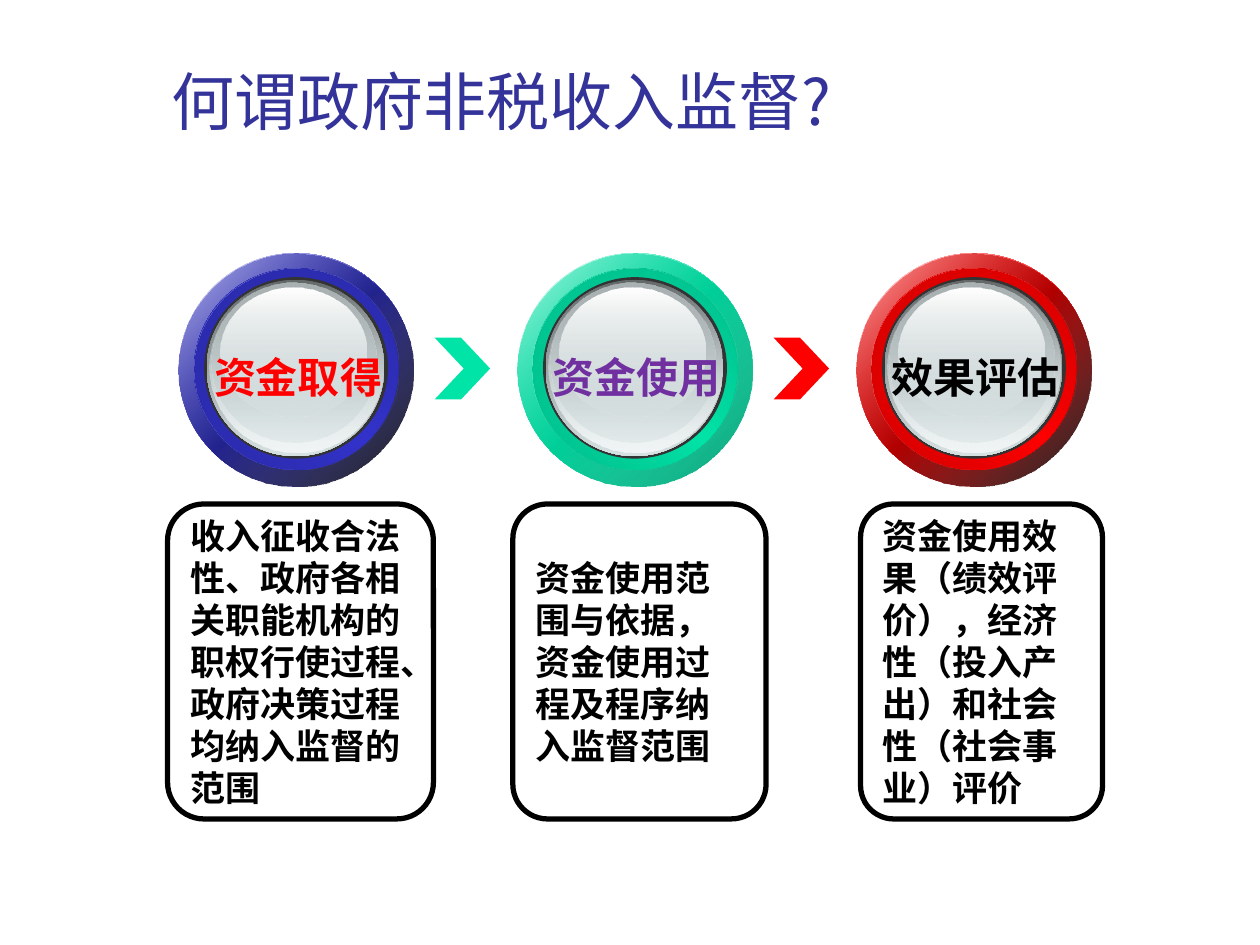
from pptx import Presentation
from pptx.dml.color import RGBColor
from pptx.enum.shapes import MSO_SHAPE
from pptx.enum.text import MSO_ANCHOR, MSO_AUTO_SIZE, PP_ALIGN
from pptx.oxml import parse_xml
from pptx.oxml.ns import nsdecls, qn
from pptx.util import Inches, Pt

OVAL, CHEVRON, ROUNDED = MSO_SHAPE.OVAL, MSO_SHAPE.CHEVRON, MSO_SHAPE.ROUNDED_RECTANGLE
LEFT, CENTER = PP_ALIGN.LEFT, PP_ALIGN.CENTER
CJK = "Noto Sans CJK SC"

# Content
TITLE = "何谓政府非税收入监督?"
# label, label colour, ring colour, ring edge, ring inner edge, shade (colour, opacity),
# box left and width, box text
STAGES = [
    ("资金取得", "FF0000", "3333CC", "27279C", "2A2AA7", ("000000", 90), (1.33, 2.11),
     "收入征收合法性、政府各相关职能机构的职权行使过程、政府决策过程均纳入监督的范围"),
    ("资金使用", "7030A0", "00E4A8", "00AF81", "00BB8A", ("00A378", 100), (4.07, 2.01),
     "资金使用范围与依据，资金使用过程及程序纳入监督范围"),
    ("效果评估", "000000", "FF0000", "C30000", "D10000", ("000000", 90), (6.83, 1.92),
     "资金使用效果（绩效评价），经济性（投入产出）和社会性（社会事业）评价"),
]
# Glass button layers: offset in the dial, size, top and bottom (colour, opacity)
GLASS = [
    (0.22, 0.21, 1.41, 1.40, ("636869", 100), ("D6E1E2", 100)),
    (0.24, 0.22, 1.38, 1.36, ("D6E1E2", 0), ("F1F5F5", 100)),
    (0.26, 0.23, 1.31, 1.27, ("AAB2B3", 100), ("D6E1E2", 48)),
    (0.33, 0.27, 1.16, 1.03, ("FFFFFF", 100), ("D6E1E2", 38)),
]

# Grid
DIAL_LEFT, DIAL_TOP, PITCH = 1.42, 2.01, 2.69
BOX_TOP, BOX_HEIGHT = 4, 2.5


def rgb(value):
    return RGBColor.from_string(value)


def add_shape(parent, kind, left, top, width, height, fill=None):
    s = parent.add_shape(kind, *map(Inches, (left, top, width, height)))
    s.shadow.inherit = False
    s.line.fill.background()
    if fill:
        s.fill.solid()
        s.fill.fore_color.rgb = rgb(fill)
    else:
        s.fill.background()
    return s


def add_gradient_oval(parent, left, top, width, height, angle, *stops):
    """Oval with evenly spread (colour, opacity) stops; the angle runs clockwise."""
    s = add_shape(parent, OVAL, left, top, width, height)
    step = 100000 // (len(stops) - 1)
    marks = "".join(
        f'<a:gs pos="{i * step}"><a:srgbClr val="{color}">'
        f'<a:alpha val="{opacity * 1000}"/></a:srgbClr></a:gs>'
        for i, (color, opacity) in enumerate(stops))
    gradient = parse_xml(
        f'<a:gradFill {nsdecls("a")} rotWithShape="1"><a:gsLst>{marks}</a:gsLst>'
        f'<a:lin ang="{angle * 60000}" scaled="0"/></a:gradFill>')
    spPr = s.fill._xPr
    spPr.replace(spPr.find(qn("a:noFill")), gradient)


def write(s, text, size, color, font, east_asian, bold, align, anchor):
    tf = s.text_frame
    tf.vertical_anchor = anchor
    p = tf.paragraphs[0]
    p.alignment = align
    r = p.add_run()
    r.text = text
    for name, value in {"size": Pt(size), "bold": bold, "name": font}.items():
        setattr(r.font, name, value)
    r.font.color.rgb = rgb(color)
    r.font._element.find(qn("a:latin")).addnext(
        parse_xml(f'<a:ea {nsdecls("a")} typeface="{east_asian}"/>'))
    return tf


def add_dial(shapes, left, top, ring, edge, inner_edge, shade):
    full = 100
    outer = (left, top, 1.86, 1.85)
    inner = (left + 0.12, top + 0.12, 1.62, 1.6)
    white = ("FFFFFF", full)
    # Coloured rings and the dark rim
    add_gradient_oval(shapes, *outer, 45, white, (ring, full), white)
    add_gradient_oval(shapes, *outer, 45, (ring, 32), shade)
    add_gradient_oval(shapes, *inner, 315, (edge, full), (ring, full), (edge, full))
    add_gradient_oval(shapes, *inner, 45, (inner_edge, full), (ring, 0))
    add_shape(shapes, OVAL, left + 0.2, top + 0.19, 1.46, 1.44, "333333")
    # Glass button
    group = shapes.add_group_shape()
    for dx, dy, width, height, start, end in GLASS:
        add_gradient_oval(group.shapes, left + dx, top + dy, width, height, 90, start, end)


def main():
    prs = Presentation()
    prs.slide_width, prs.slide_height = Inches(10), Inches(7.5)
    slide = prs.slides.add_slide(prs.slide_layouts[5])
    shapes = slide.shapes

    # Title
    title = shapes.title
    title.left, title.top, title.width, title.height = map(Inches, (1.26, 0.23, 8.52, 0.92))
    tf = write(title, TITLE, 36, "333399", CJK, CJK, False, LEFT, MSO_ANCHOR.BOTTOM)
    tf.auto_size = MSO_AUTO_SIZE.NONE

    for i, (label, color, ring, edge, inner_edge, shade, (box_left, box_width),
            text) in enumerate(STAGES):
        left = DIAL_LEFT + i * PITCH

        # Explanation box
        box = add_shape(shapes, ROUNDED, box_left, BOX_TOP, box_width, BOX_HEIGHT)
        box.adjustments[0] = 0.137
        box.line.color.rgb = rgb("000000")
        box.line.width = Pt(3)
        write(box, text, 20, "000000", "Noto Sans CJK JP", "Noto Sans CJK JP", True,
              LEFT, MSO_ANCHOR.MIDDLE).word_wrap = True

        # Chevron from the previous stage, in this stage's colour
        if i:
            arrow = add_shape(shapes, CHEVRON, left - 0.66, 2.68, 0.44, 0.49, ring)
            arrow.adjustments[0] = 0.525

        # Dial and its label
        add_dial(shapes, left, DIAL_TOP, ring, edge, inner_edge, shade)
        caption = shapes.add_textbox(*map(Inches, (left + 0.17, 2.74, 1.55, 0.51)))
        tf = write(caption, label, 24, color, "Arial", CJK, True, CENTER, MSO_ANCHOR.TOP)
        tf.word_wrap = False
        tf.auto_size = MSO_AUTO_SIZE.SHAPE_TO_FIT_TEXT

    prs.save("out.pptx")


if __name__ == "__main__":
    main()
